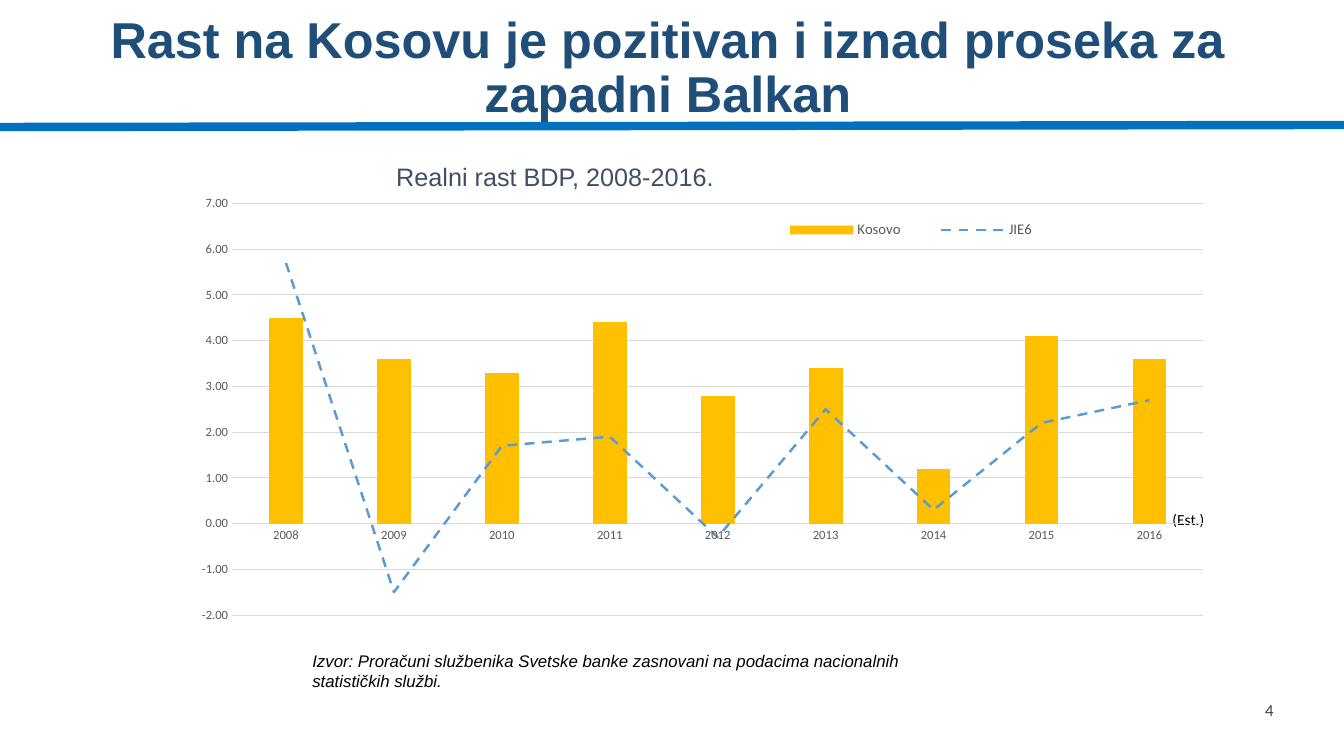
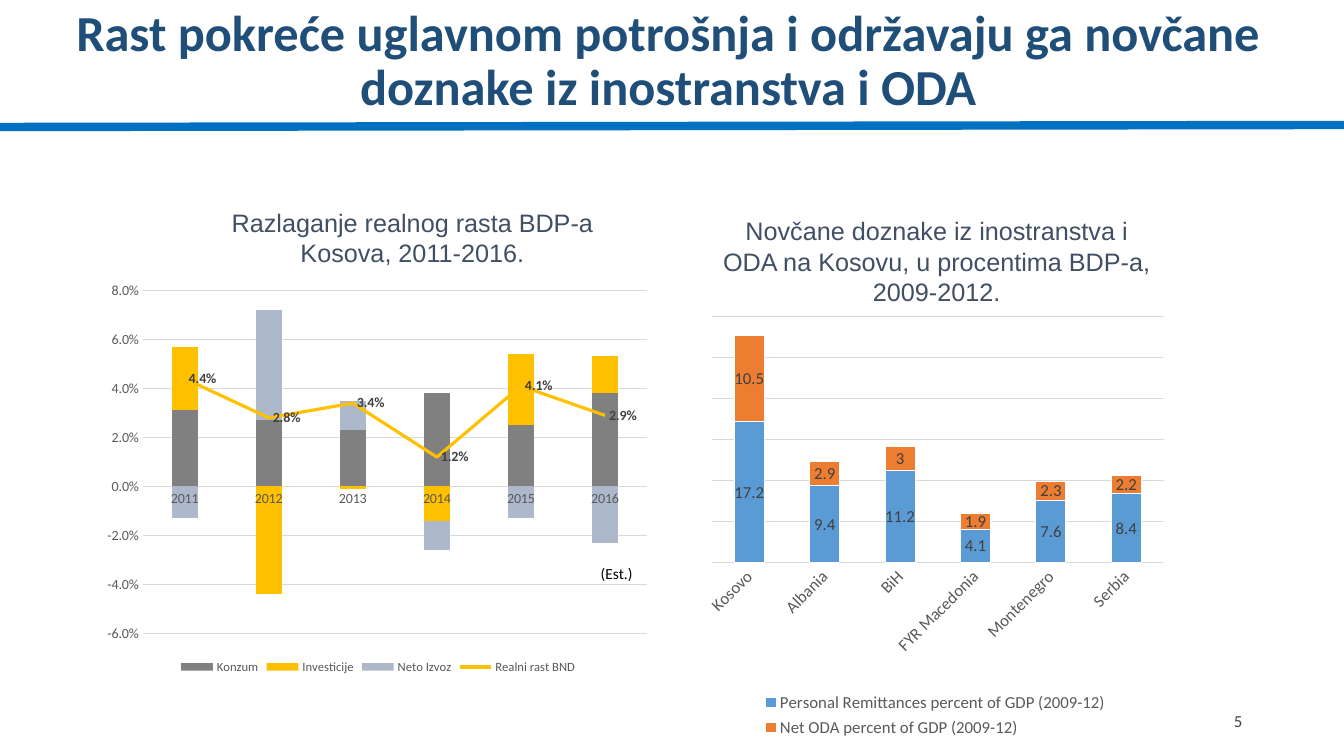
from copy import deepcopy
from dataclasses import dataclass
from typing import Optional

from lxml import etree
from pptx import Presentation
from pptx.chart.chart import Chart
from pptx.chart.data import CategoryChartData
from pptx.chart.legend import Legend
from pptx.dml.color import RGBColor
from pptx.enum.chart import XL_CHART_TYPE as ChartType
from pptx.enum.chart import XL_LABEL_POSITION as LabelPosition
from pptx.enum.chart import XL_LEGEND_POSITION as LegendPosition
from pptx.enum.chart import XL_MARKER_STYLE as MarkerStyle
from pptx.enum.chart import XL_TICK_MARK as TickMark
from pptx.enum.dml import MSO_LINE as LineDash
from pptx.enum.shapes import MSO_CONNECTOR as Connector
from pptx.enum.text import MSO_ANCHOR as Anchor
from pptx.enum.text import PP_ALIGN as Align
from pptx.oxml import parse_xml
from pptx.oxml.ns import nsdecls, qn
from pptx.slide import Slide
from pptx.text.text import Font
from pptx.util import Inches, Pt

Box = tuple[float, float, float, float]


@dataclass(frozen=True)
class Theme:
    title: str = "1F4E79"
    heading: str = "404F64"
    rule: str = "0070C0"
    text: str = "000000"
    label: str = "404040"
    axis: str = "595959"
    grid: str = "D9D9D9"
    white: str = "FFFFFF"
    gold: str = "FFC000"
    blue: str = "5B9BD5"
    orange: str = "ED7D31"
    grey: str = "808080"
    mist: str = "ADB9CA"
    sans: str = "Arial"
    body: str = "Calibri"
    title_size: float = 36
    heading_size: float = 18
    small_size: float = 12
    estimate_size: float = 11


THEME = Theme()


@dataclass(frozen=True)
class TextStyle:
    size: float
    color: str
    font: str = THEME.body
    bold: bool = False
    italic: bool = False
    align: Align = Align.LEFT
    anchor: Anchor = Anchor.TOP
    wrap: bool = True
    spacing: float = 1.0


HEADING = TextStyle(THEME.heading_size, THEME.heading, THEME.sans, align=Align.CENTER)
SOURCE = TextStyle(THEME.small_size, THEME.text, THEME.sans, italic=True)
NUMBER = TextStyle(THEME.small_size, THEME.label, align=Align.RIGHT, anchor=Anchor.MIDDLE)
ESTIMATE = TextStyle(THEME.estimate_size, THEME.text, wrap=False)


@dataclass(frozen=True)
class Series:
    name: str
    values: tuple[float, ...]
    color: str
    outline: Optional[str] = None
    label_format: Optional[str] = None


@dataclass(frozen=True)
class LineSeries(Series):
    width: float = 2.25
    dash: Optional[LineDash] = None
    label_size: float = 10


@dataclass(frozen=True)
class ChartSpec:
    box: Box
    categories: tuple[str, ...]
    bars: tuple[Series, ...]
    scale: tuple[float, float, float]
    plot: Box
    axis_size: float
    legend_size: float
    line: Optional[LineSeries] = None
    kind: ChartType = ChartType.COLUMN_STACKED
    gap: int = 219
    overlap: int = 100
    value_format: Optional[str] = None
    legend: Optional[Box] = None
    label_turn: Optional[int] = None


def rgb(color: str) -> RGBColor:
    return RGBColor.from_string(color)


def set_font(font: Font, size: float, color: str, name: str = THEME.body, bold: bool = False) -> None:
    font.size, font.name, font.bold = Pt(size), name, bold
    font.color.rgb = rgb(color)


def add_text(slide: Slide, box: Box, text: str, style: TextStyle) -> None:
    frame = slide.shapes.add_textbox(*map(Inches, box)).text_frame
    frame.word_wrap = style.wrap
    frame.vertical_anchor = style.anchor
    paragraph = frame.paragraphs[0]
    paragraph.alignment = style.align
    paragraph.line_spacing = style.spacing
    run = paragraph.add_run()
    run.text = text
    set_font(run.font, style.size, style.color, style.font, style.bold)
    run.font.italic = style.italic


def add_frame(slide: Slide, title: str, title_box: Box, title_font: str,
              number: str, number_box: Box) -> None:
    """Draw the title, the rule below it and the slide number."""
    style = TextStyle(THEME.title_size, THEME.title, title_font, bold=True,
                      align=Align.CENTER, anchor=Anchor.MIDDLE, spacing=0.9)
    add_text(slide, title_box, title, style)
    rule = slide.shapes.add_connector(
        Connector.STRAIGHT, Inches(0), Inches(1.26), Inches(13.33), Inches(1.24))
    rule.line.color.rgb = rgb(THEME.rule)
    rule.line.width = Pt(6)
    etree.SubElement(rule._element.spPr, qn("a:effectLst"))
    add_text(slide, number_box, number, NUMBER)


def manual_layout(box: Box, inner: bool = False):
    target = '<c:layoutTarget val="inner"/>' if inner else ""
    modes = "".join(f'<c:{axis}Mode val="edge"/>' for axis in "xy")
    sizes = "".join(f'<c:{side} val="{value}"/>' for side, value in zip("xywh", box))
    return parse_xml(f'<c:layout {nsdecls("c")}><c:manualLayout>{target}{modes}{sizes}'
                     "</c:manualLayout></c:layout>")


def place_plot(chart: Chart, box: Box) -> None:
    area = chart._chartSpace.chart.plotArea
    for layout in area.findall(qn("c:layout")):
        area.remove(layout)
    area.insert(0, manual_layout(box, inner=True))


def place_legend(legend: Legend, box: Box) -> None:
    element = legend._element
    for layout in element.findall(qn("c:layout")):
        element.remove(layout)
    element.find(qn("c:legendPos")).addnext(manual_layout(box))


def last_bar_to_line(chart: Chart) -> None:
    """Move the last column series to a line plot on the same axes."""
    bars = chart._chartSpace.chart.plotArea.find(qn("c:barChart"))
    series = bars.findall(qn("c:ser"))[-1]
    for invert in series.findall(qn("c:invertIfNegative")):
        series.remove(invert)
    lines = parse_xml(f'<c:lineChart {nsdecls("c")}><c:grouping val="standard"/>'
                      '<c:varyColors val="0"/></c:lineChart>')
    lines.append(series)
    etree.SubElement(lines, qn("c:marker")).set("val", "1")
    for axis_id in bars.findall(qn("c:axId")):
        lines.append(deepcopy(axis_id))
    bars.addnext(lines)


def add_labels(series, number_format: str, size: float, position: LabelPosition, bold: bool = False) -> None:
    labels = series.data_labels
    labels.show_value = True
    labels.number_format = number_format
    labels.number_format_is_linked = False
    labels.position = position
    set_font(labels.font, size, THEME.label, bold=bold)


def style_axes(chart: Chart, spec: ChartSpec) -> None:
    category_axis, value_axis = chart.category_axis, chart.value_axis
    for axis in (category_axis, value_axis):
        axis.major_tick_mark = axis.minor_tick_mark = TickMark.NONE
        set_font(axis.tick_labels.font, spec.axis_size, THEME.axis)
    value_axis.minimum_scale, value_axis.maximum_scale, value_axis.major_unit = spec.scale
    for line in (category_axis.format.line, value_axis.major_gridlines.format.line):
        line.color.rgb = rgb(THEME.grid)
        line.width = Pt(0.75)
    value_axis.format.line.fill.background()
    if spec.value_format:
        value_axis.tick_labels.number_format = spec.value_format
        value_axis.tick_labels.number_format_is_linked = False
    else:
        value_axis.visible = False
    if spec.label_turn is not None:
        body = category_axis._element.find(qn("c:txPr")).find(qn("a:bodyPr"))
        body.set("rot", str(spec.label_turn * 60000))
        body.set("vert", "horz")


def style_series(chart: Chart, spec: ChartSpec) -> None:
    columns = chart.plots[0]
    columns.gap_width, columns.overlap = spec.gap, spec.overlap
    columns.vary_by_categories = False
    for item, series in zip(spec.bars, columns.series):
        series.invert_if_negative = False
        series.format.fill.solid()
        series.format.fill.fore_color.rgb = rgb(item.color)
        if item.outline:
            series.format.line.color.rgb = rgb(item.outline)
            series.format.line.width = Pt(0.75)
        if item.label_format:
            add_labels(series, item.label_format, THEME.small_size, LabelPosition.CENTER)
    if spec.line:
        series = chart.plots[1].series[0]
        series.smooth = False
        series.marker.style = MarkerStyle.NONE
        series.format.line.color.rgb = rgb(spec.line.color)
        series.format.line.width = Pt(spec.line.width)
        if spec.line.dash:
            series.format.line.dash_style = spec.line.dash
        if spec.line.label_format:
            add_labels(series, spec.line.label_format, spec.line.label_size, LabelPosition.RIGHT, bold=True)


def add_chart(slide: Slide, spec: ChartSpec) -> None:
    data = CategoryChartData()
    data.categories = spec.categories
    for item in spec.bars + ((spec.line,) if spec.line else ()):
        data.add_series(item.name, item.values)
    chart = slide.shapes.add_chart(spec.kind, *map(Inches, spec.box), data).chart
    set_font(chart.font, spec.axis_size, THEME.text)
    chart.has_title = False
    if spec.line:
        last_bar_to_line(chart)
    style_axes(chart, spec)
    style_series(chart, spec)
    place_plot(chart, spec.plot)
    chart.has_legend = True
    chart.legend.position = LegendPosition.BOTTOM
    chart.legend.include_in_layout = False
    set_font(chart.legend.font, spec.legend_size, THEME.axis)
    if spec.legend:
        place_legend(chart.legend, spec.legend)


GROWTH = ChartSpec(
    box=(1.68, 1.8, 10.36, 4.39), kind=ChartType.COLUMN_CLUSTERED, overlap=-27,
    categories=tuple(str(year) for year in range(2008, 2017)),
    bars=(Series("Kosovo", (4.5, 3.6, 3.3, 4.4, 2.8, 3.4, 1.2, 4.1, 3.6), THEME.gold),),
    line=LineSeries("JIE6", (5.7, -1.5, 1.7, 1.9, -0.3, 2.5, 0.3, 2.2, 2.7), THEME.blue,
                    width=1.75, dash=LineDash.DASH),
    scale=(-2, 7, 1), value_format="#,##0.00", plot=(0.06, 0.05, 0.93, 0.93),
    axis_size=9, legend_size=10.5, legend=(0.56, 0.07, 0.3, 0.08))

BREAKDOWN = ChartSpec(
    box=(0.97, 2.72, 5.56, 4.01),
    categories=tuple(str(year) for year in range(2011, 2017)),
    bars=(Series("Konzum", (0.031, 0.027, 0.023, 0.038, 0.025, 0.038), THEME.grey),
          Series("Investicije", (0.026, -0.044, -0.001, -0.014, 0.029, 0.015), THEME.gold),
          Series("Neto Izvoz", (-0.013, 0.045, 0.012, -0.012, -0.013, -0.023), THEME.mist)),
    line=LineSeries("Realni rast BND", (0.044, 0.028, 0.034, 0.012, 0.041, 0.029), THEME.gold,
                    label_format="0.0%"),
    scale=(-0.06, 0.08, 0.02), value_format="0.0%", plot=(0.08, 0.04, 0.9, 0.85),
    axis_size=10, legend_size=9)

REMITTANCES = ChartSpec(
    box=(6.92, 2.92, 4.63, 4.44), gap=150,
    categories=("Kosovo", "Albania", "BiH", "FYR Macedonia", "Montenegro", "Serbia"),
    bars=(Series("Personal Remittances percent of GDP (2009-12)", (17.2, 9.4, 11.2, 4.1, 7.6, 8.4),
                 THEME.blue, THEME.white, "General"),
          Series("Net ODA percent of GDP (2009-12)", (10.5, 2.9, 3, 1.9, 2.3, 2.2),
                 THEME.orange, THEME.white, "General")),
    scale=(0, 30, 5), plot=(0.03, 0.05, 0.97, 0.55),
    axis_size=12, legend_size=12, legend=(0.12, 0.88, 0.78, 0.12), label_turn=-45)


def build_growth(slide: Slide) -> None:
    add_frame(slide, "Rast na Kosovu je pozitivan i iznad proseka za zapadni Balkan",
              (0.28, -0.04, 12.69, 1.45), THEME.sans, "4", (9.73, 6.84, 3, 0.4))
    add_text(slide, (1.64, 1.55, 7.73, 0.4), "Realni rast BDP, 2008-2016.", HEADING)
    add_text(slide, (3, 6.41, 6.37, 0.5),
             "Izvor: Proračuni službenika Svetske banke zasnovani na podacima "
             "nacionalnih statističkih službi.", SOURCE)
    add_text(slide, (11.53, 5.01, 0.52, 0.29), "(Est.)", ESTIMATE)
    add_chart(slide, GROWTH)


def build_drivers(slide: Slide) -> None:
    add_frame(slide, "Rast pokreće uglavnom potrošnja i održavaju ga novčane doznake iz inostranstva i ODA",
              (0.15, 0.1, 12.96, 1.04), THEME.body, "5", (9.42, 6.95, 3, 0.4))
    add_chart(slide, REMITTANCES)
    add_text(slide, (1.83, 2.01, 4.52, 0.71), "Razlaganje realnog rasta BDP-a Kosova, 2011-2016.", HEADING)
    add_text(slide, (7.03, 2.09, 4.52, 1.01),
             "Novčane doznake iz inostranstva i ODA na Kosovu, u procentima BDP-a, 2009-2012.", HEADING)
    add_text(slide, (5.86, 5.55, 0.52, 0.29), "(Est.)", ESTIMATE)
    add_chart(slide, BREAKDOWN)


def main() -> None:
    presentation = Presentation()
    presentation.slide_width, presentation.slide_height = Inches(13.33), Inches(7.5)
    blank = presentation.slide_layouts[6]
    for build in (build_growth, build_drivers):
        build(presentation.slides.add_slide(blank))
    presentation.save("out.pptx")


if __name__ == "__main__":
    main()
